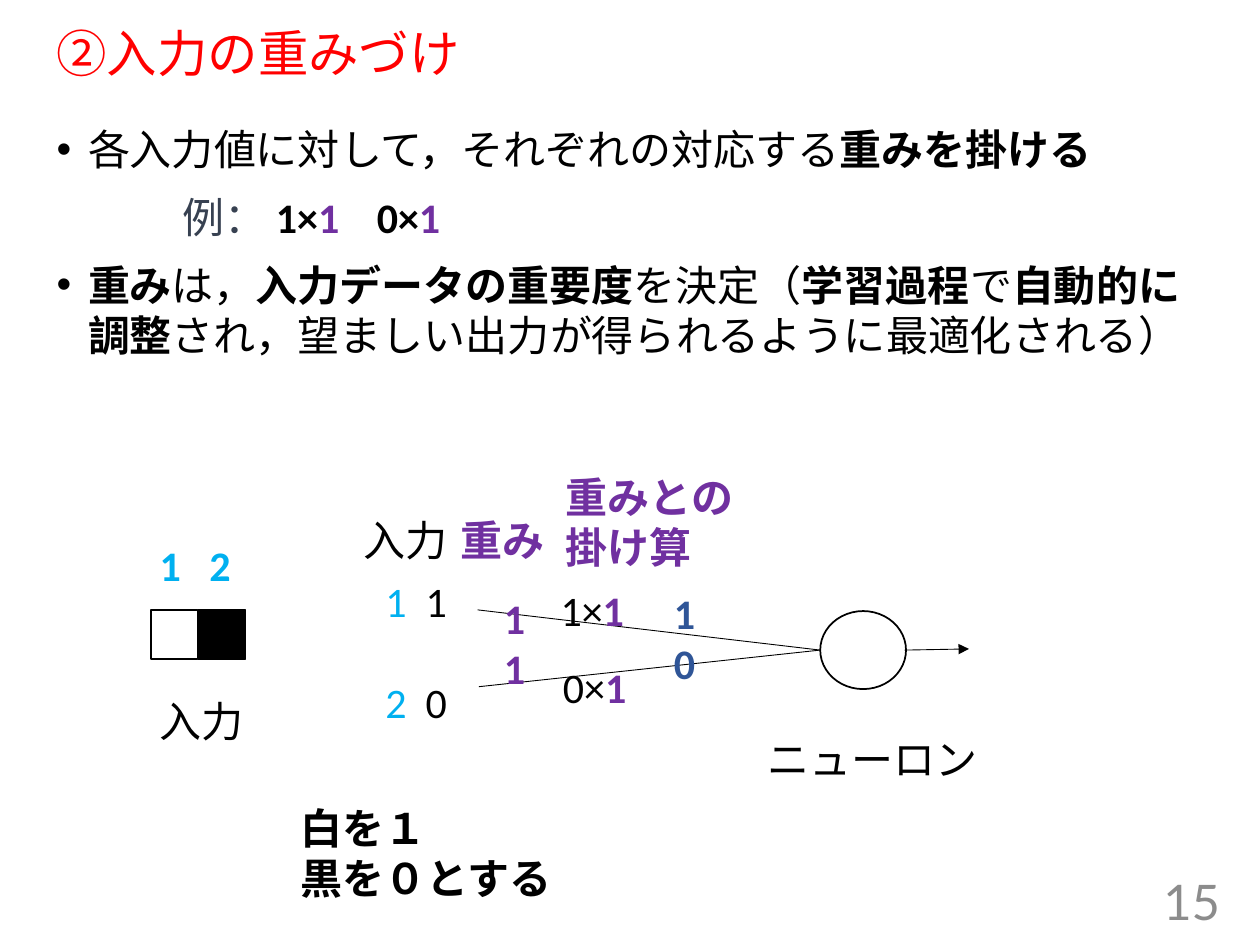
"""Build the slide on weighting the inputs of a neuron."""
from dataclasses import dataclass

import pptx
import pptx.dml.color
import pptx.enum.shapes
import pptx.enum.text
import pptx.oxml.ns
import pptx.util
from lxml import etree

Pt = pptx.util.Pt
Shape = pptx.enum.shapes.MSO_SHAPE
Anchor = pptx.enum.text.MSO_ANCHOR
Align = pptx.enum.text.PP_ALIGN

BLACK, PURPLE, CYAN, BLUE = "000000", "7030A0", "00B0F0", "2F5597"
RED, SLATE, GREY = "FF0000", "374151", "8C8C8C"


@dataclass
class Run:
    text: str
    color: str = BLACK
    bold: bool = False
    font: str = "Calibri"
    size: float = 24


@dataclass
class Line:
    runs: list[Run]
    bullet: bool = False
    before: float = 0
    spacing: float = 1
    tabs: tuple[float, ...] = ()
    align: Align = Align.LEFT


@dataclass
class TextBox:
    left: float
    top: float
    width: float
    height: float
    lines: list[Line]
    wrap: bool = False
    anchor: Anchor = Anchor.TOP


@dataclass
class Outline:
    kind: Shape
    left: float
    top: float
    width: float
    height: float
    fill: str = ""


@dataclass
class Link:
    start: tuple[float, float]
    end: tuple[float, float]
    arrow: bool = False


def rgb(color: str) -> pptx.dml.color.RGBColor:
    """Turn a hex string into a colour."""
    return pptx.dml.color.RGBColor.from_string(color)


def add_child(parent, tag: str, **attributes: str):
    """Append a DrawingML element."""
    return etree.SubElement(parent, pptx.oxml.ns.qn(tag), attributes)


def write_line(paragraph, line: Line) -> None:
    """Format a paragraph and add its runs."""
    paragraph.alignment = line.align
    paragraph.space_before = Pt(line.before)
    paragraph.line_spacing = line.spacing
    properties = paragraph._p.get_or_add_pPr()
    if line.bullet:
        properties.set("marL", str(Pt(18)))
        properties.set("indent", str(Pt(-18)))
        add_child(properties, "a:buFont", typeface="Arial")
        add_child(properties, "a:buChar", char="•")
    if line.tabs:
        stops = add_child(properties, "a:tabLst")
        for position in line.tabs:
            add_child(stops, "a:tab", pos=str(Pt(position)), algn="l")
    for item in line.runs:
        run = paragraph.add_run()
        run.text = item.text
        run.font.name = item.font
        run.font.size = Pt(item.size)
        run.font.bold = item.bold
        run.font.color.rgb = rgb(item.color)


def draw_text(slide, box: TextBox) -> None:
    """Draw a text box."""
    shape = slide.shapes.add_textbox(Pt(box.left), Pt(box.top), Pt(box.width), Pt(box.height))
    frame = shape.text_frame
    frame.word_wrap = box.wrap
    frame.vertical_anchor = box.anchor
    for index, line in enumerate(box.lines):
        write_line(frame.add_paragraph() if index else frame.paragraphs[0], line)


def draw_outline(slide, outline: Outline) -> None:
    """Draw an outlined shape, filled when it has a fill colour."""
    shape = slide.shapes.add_shape(
        outline.kind, Pt(outline.left), Pt(outline.top), Pt(outline.width), Pt(outline.height))
    shape.shadow.inherit = False
    if outline.fill:
        shape.fill.solid()
        shape.fill.fore_color.rgb = rgb(outline.fill)
    else:
        shape.fill.background()
    shape.line.color.rgb = rgb(BLACK)
    shape.line.width = Pt(1)


def draw_link(slide, link: Link) -> None:
    """Draw a thin line, with an arrowhead when asked."""
    connector = slide.shapes.add_connector(
        pptx.enum.shapes.MSO_CONNECTOR.STRAIGHT, *map(Pt, link.start), *map(Pt, link.end))
    connector.line.color.rgb = rgb(BLACK)
    connector.line.width = Pt(0.5)
    if link.arrow:
        add_child(connector.line._get_or_add_ln(), "a:tailEnd", type="triangle")
    add_child(connector._element.spPr, "a:effectLst")


def label(left: float, top: float, width: float, *texts: str,
          color: str = BLACK, bold: bool = False, tabs: tuple[float, ...] = ()) -> TextBox:
    """Describe a one-colour label with a line for each text."""
    lines = [Line([Run(text, color, bold)], tabs=tabs) for text in texts]
    return TextBox(left, top, width, 7.2 + 28.8 * len(texts), lines)


def product(left: float, top: float, value: str) -> TextBox:
    """Describe an input value multiplied by its weight."""
    return TextBox(left, top, 63.4, 36, [Line([Run(value + "×"), Run("1", PURPLE, True)])])


def body_run(text: str, bold: bool = False) -> Run:
    """Describe a run of the bullet text."""
    return Run(text, bold=bold, font="Lato")


BODY = [
    Line([body_run("各入力値に対して，それぞれの対応する"), body_run("重みを掛ける", True)],
         bullet=True, before=10),
    Line([Run("\t例： ", SLATE, font="Arial"), Run("1×", bold=True), Run("1\t", PURPLE, True),
          Run("0×", bold=True), Run("1", PURPLE, True)], before=10, tabs=(72, 183)),
    Line([body_run("重み", True), body_run("は，"), body_run("入力データの重要度", True),
          body_run("を決定（"), body_run("学習過程", True), body_run("で"),
          body_run("自動的に調整", True),
          body_run("され，望ましい出力が得られるように最適化される）")], bullet=True, before=10),
]
NUMBERED_INPUTS = [
    Line([Run(f"{number}\t", CYAN), Run(value)], before=before, tabs=(23,))
    for number, value, before in (("1", "1", 0), ("2", "0", 28.8))
]
TEXTS = [
    TextBox(25.2, 13.7, 666, 36.7, [Line([Run("②入力の重みづけ", RED, font="Lato", size=28.8)],
            spacing=0.9)], wrap=True, anchor=Anchor.MIDDLE),
    TextBox(25.2, 67, 666, 419.8, BODY, wrap=True),
    TextBox(542.2, 500.4, 162, 28.8, [Line([Run("15", GREY, font="Lato", size=28)],
            align=Align.RIGHT)], wrap=True, anchor=Anchor.MIDDLE),
    label(84.2, 393.8, 63.4, "入力"),
    label(84.2, 304.6, 55.4, "1\t2", color=CYAN, bold=True, tabs=(28.4,)),
    TextBox(213.1, 325.4, 49.7, 94.3, NUMBERED_INPUTS),
    label(256.3, 290.2, 63.4, "重み", color=PURPLE, bold=True),
    product(313.2, 330.5, "1"),
    label(280.8, 334.8, 32.4, "1", "1", color=PURPLE, bold=True),
    product(314.6, 374.4, "0"),
    label(316.1, 265.7, 111.6, "重みとの", "掛け算", color=PURPLE, bold=True),
    label(378, 331.9, 32.4, "1", "0", color=BLUE, bold=True),
    label(200.9, 290.2, 63.4, "入力"),
    label(431.3, 415.4, 135.4, "ニューロン"),
    label(164.9, 455, 159.8, "白を１", "黒を０とする", bold=True),
]
OUTLINES = [
    Outline(Shape.RECTANGLE, 113.8, 348.5, 26.6, 28.1, BLACK),
    Outline(Shape.RECTANGLE, 86.4, 348.5, 26.6, 28.1),
    Outline(Shape.RECTANGLE, 113, 348.5, 26.6, 28.1),
    Outline(Shape.OVAL, 468.7, 349.2, 49, 44.6),
]
LINKS = [
    Link((517, 371.5), (553.7, 370.8), arrow=True),
    Link((272.9, 348.5), (468.7, 371.5)),
    Link((273.6, 392.4), (468.7, 371.5)),
]


def main() -> None:
    """Build and save the presentation."""
    presentation = pptx.Presentation()
    presentation.slide_width, presentation.slide_height = Pt(720), Pt(540)
    slide = presentation.slides.add_slide(presentation.slide_layouts[6])
    for outline in OUTLINES:
        draw_outline(slide, outline)
    for link in LINKS:
        draw_link(slide, link)
    for box in TEXTS:
        draw_text(slide, box)
    presentation.save("out.pptx")


if __name__ == "__main__":
    main()
